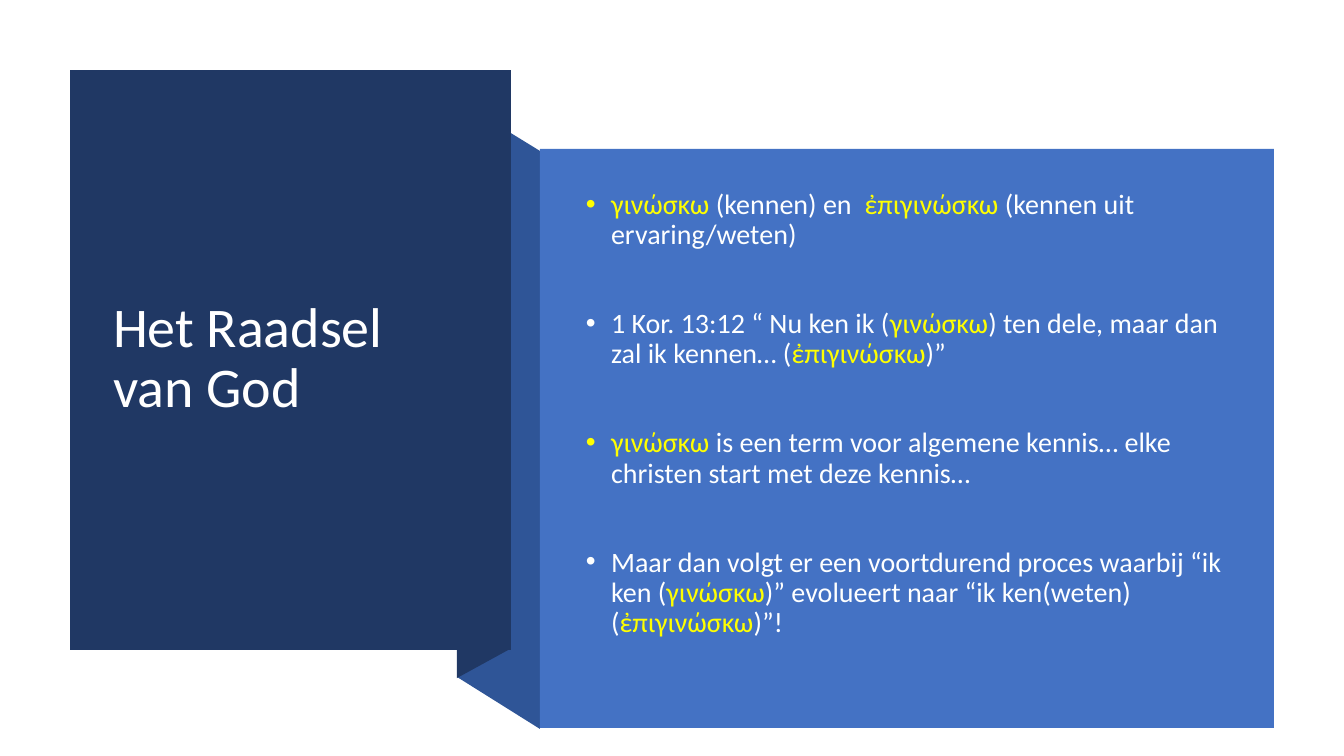
from lxml.etree import SubElement
from pptx import Presentation
from pptx.dml.color import RGBColor
from pptx.enum.shapes import MSO_SHAPE as Shape
from pptx.enum.text import MSO_ANCHOR as Anchor, PP_ALIGN as Align
from pptx.oxml.ns import qn
from pptx.util import Pt

PX = 914400 / 100.8
NAVY, FOLD_BLUE, PANEL_BLUE = "203864", "2F5597", "4472C4"
WHITE, NEAR_WHITE, YELLOW = "FFFFFF", "FEFFFF", "FFFF00"


def px(*lengths):
    return [round(length * PX) for length in lengths]


def paint(color_format, color):
    color_format.rgb = RGBColor.from_string(color)


deck = Presentation()
deck.slide_width, deck.slide_height = px(1344, 756)
slide = deck.slides.add_slide(deck.slide_layouts[5])
shapes = slide.shapes

ribbon = [
    (FOLD_BLUE, [(540, 729), (457, 677), (457, 100), (540, 151)]),
    (NAVY, [(510, 649), (457, 678), (457, 99), (510, 70)]),
    (NAVY, [(70, 70), (511, 70), (511, 650), (70, 650)]),
]
for color, corners in ribbon:
    builder = shapes.build_freeform(*corners[0], scale=PX)
    builder.add_line_segments(corners[1:], close=True)
    face = builder.convert_to_shape()
    face.shadow.inherit = False
    face.fill.solid()
    paint(face.fill.fore_color, color)
    face.line.fill.background()

panel = shapes.add_shape(Shape.RECTANGLE, *px(540, 149, 734, 579))
panel.shadow.inherit = False
panel.fill.solid()
paint(panel.fill.fore_color, PANEL_BLUE)
panel.line.fill.background()

title = shapes.title
panel.element.addprevious(title.element)
title.left, title.top, title.width, title.height = px(103, 108, 376, 503)
title.text_frame.word_wrap = True
title.text_frame.vertical_anchor = Anchor.MIDDLE
heading = title.text_frame.paragraphs[0]
heading.alignment = Align.LEFT
heading.line_spacing = 0.9
heading_run = heading.add_run()
heading_run.text = "Het Raadsel van God"
heading_run.font.size = Pt(40)
heading_run.font.name = "Calibri"
paint(heading_run.font.color, WHITE)

points = [
    "|γινώσκω |(kennen) en  |ἐπιγινώσκω| (kennen uit ervaring/weten)",
    "1 Kor. 13:12 “ Nu ken ik (|γινώσκω|) ten dele, maar dan zal ik kennen… (|ἐπιγινώσκω|)”",
    "|γινώσκω| is een term voor algemene kennis… elke christen start met deze kennis…",
    "Maar dan volgt er een voortdurend proces waarbij “ik ken (|γινώσκω|)” evolueert naar "
    "“ik ken(weten)(|ἐπιγινώσκω|)”!",
]
body = shapes.add_textbox(*px(576, 190, 656, 478)).text_frame
body.word_wrap = True
body.vertical_anchor = Anchor.TOP
body.margin_top = 0
for index, point in enumerate(points):
    paragraph = body.paragraphs[0] if index == 0 else body.add_paragraph()
    paragraph.line_spacing = 0.9
    paragraph.space_before = Pt(42 if index else 0)
    properties = paragraph._p.get_or_add_pPr()
    properties.set("marL", "228600")
    properties.set("indent", "-228600")
    SubElement(properties, qn("a:buFont"), typeface="Arial")
    SubElement(properties, qn("a:buChar"), char="•")
    for position, wording in enumerate(point.split("|")):
        if wording:
            run = paragraph.add_run()
            run.text = wording
            run.font.size = Pt(20)
            run.font.name = "Calibri"
            paint(run.font.color, YELLOW if position % 2 else NEAR_WHITE)

deck.save("out.pptx")
